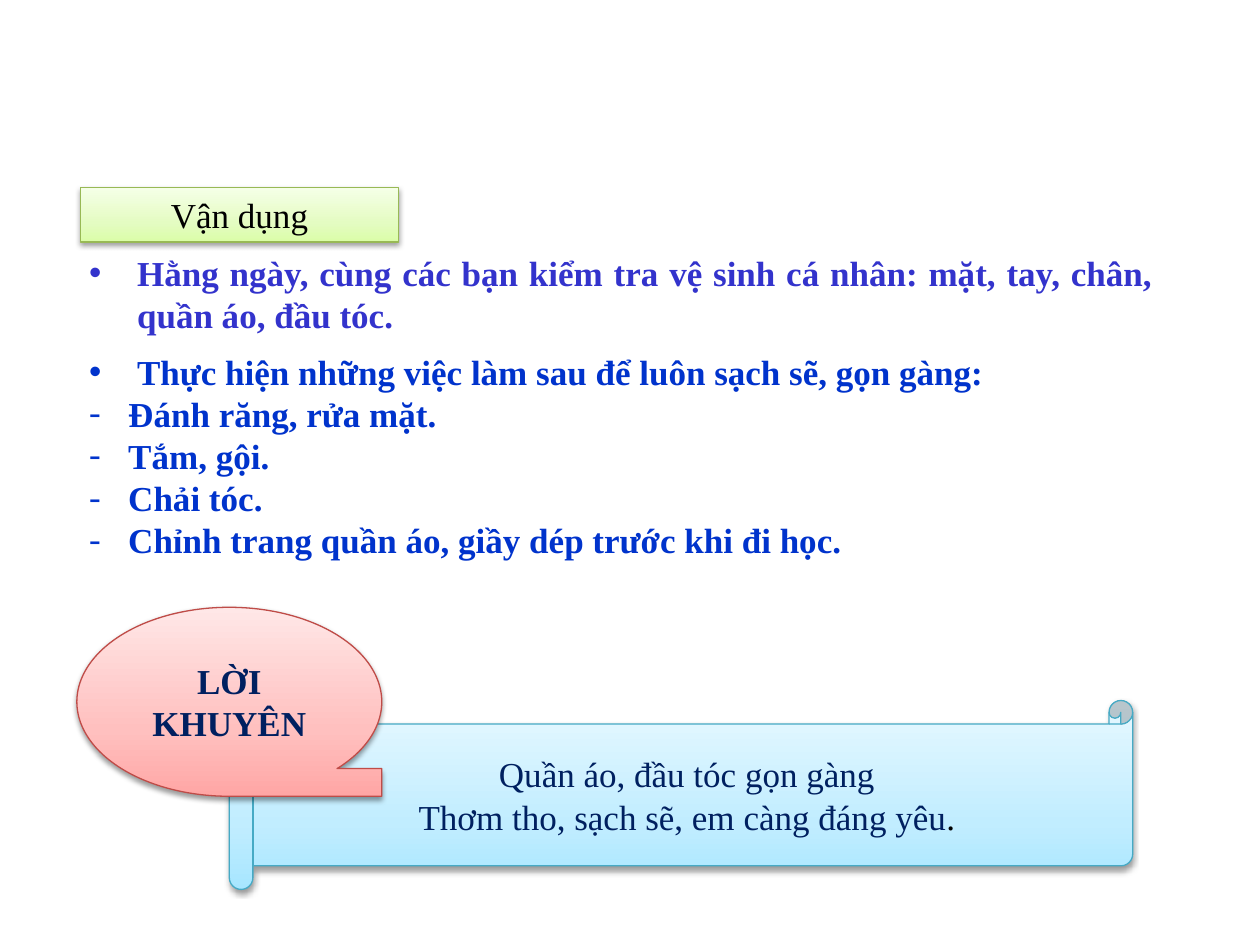
from copy import deepcopy

from lxml import etree
from pptx import Presentation
from pptx.dml.color import RGBColor
from pptx.enum import shapes, text
from pptx.oxml import ns
from pptx.util import Inches, Pt

VIOLET = RGBColor(0x33, 0x33, 0xCC)
BLUE = RGBColor(0x00, 0x33, 0xCC)
NAVY = RGBColor(0x00, 0x20, 0x60)
BLACK = RGBColor(0x00, 0x00, 0x00)
# Gradient stops from bottom to top, then the outline
SKY = [RGBColor.from_string(c) for c in ("A7E6FF", "C1EDFF", "E7F8FF", "46AAC5")]
ROSE = [RGBColor.from_string(c) for c in ("FFA6A5", "FFC0BF", "FFE7E7", "BF4C48")]
LIME = [RGBColor.from_string(c) for c in ("DAFDA7", "E4FCC2", "F5FFE7", "98B955")]

prs = Presentation()
prs.slide_width, prs.slide_height = Inches(10), Inches(7.5)
s = prs.slides.add_slide(prs.slide_layouts[6])


def add_run(p, words, color, bold):
    r = p.add_run()
    r.text = words
    font = {"name": "Times New Roman", "size": Pt(20), "bold": bold}
    for key, value in font.items():
        setattr(r.font, key, value)
    r.font.color.rgb = color


def add_sub(parent, tag, **attrs):
    return etree.SubElement(parent, ns.qn(tag), attrs)


# Bulleted lists: box, colour, (bullet, indent, words)
lists = [
    ((0.61, 1.95, 8.64, 0.77), VIOLET, [
        ("•", 0.38, "Hằng ngày, cùng các bạn kiểm tra vệ sinh cá nhân: mặt, tay, chân, quần áo, đầu tóc."),
    ]),
    ((0.61, 2.73, 8.24, 1.78), BLUE, [
        ("•", 0.38, "Thực hiện những việc làm sau để luôn sạch sẽ, gọn gàng:"),
        ("-", 0.31, "Đánh răng, rửa mặt."),
        ("-", 0.31, "Tắm, gội."),
        ("-", 0.31, "Chải tóc."),
        ("-", 0.31, "Chỉnh trang quần áo, giầy dép trước khi đi học."),
    ]),
]
for box, color, items in lists:
    tf = s.shapes.add_textbox(*map(Inches, box)).text_frame
    tf.word_wrap = True
    for i, (bullet, indent, words) in enumerate(items):
        p = tf.add_paragraph() if i else tf.paragraphs[0]
        p.alignment = text.PP_ALIGN.JUSTIFY
        pPr = p._p.get_or_add_pPr()
        pPr.set("marL", str(Inches(indent)))
        pPr.set("indent", str(-Inches(indent)))
        add_sub(pPr, "a:buFont", typeface="Arial" if bullet == "•" else "Times New Roman")
        add_sub(pPr, "a:buChar", char=bullet)
        add_run(p, words, color, True)

# Scroll, callout and heading: preset, box, colours, bold, lines of (words, colour)
panels = [
    (shapes.MSO_SHAPE.HORIZONTAL_SCROLL, (1.82, 5.56, 7.17, 1.5), SKY, False, [
        [("Quần áo, đầu tóc gọn gàng", NAVY)],
        [("Thơm tho, sạch sẽ, em càng đáng yêu", NAVY), (".", BLACK)],
    ]),
    (shapes.MSO_SHAPE.FLOWCHART_SEQUENTIAL_ACCESS_STORAGE, (0.61, 4.82, 2.42, 1.5), ROSE, True,
     [[("LỜI KHUYÊN", NAVY)]]),
    (shapes.MSO_SHAPE.FLOWCHART_PROCESS, (0.64, 1.49, 2.52, 0.43), LIME, False,
     [[("Vận dụng", BLACK)]]),
]
for preset, box, (*tints, outline), bold, lines in panels:
    sp = s.shapes.add_shape(preset, *map(Inches, box))
    sp.line.color.rgb = outline
    sp.line.width = Pt(0.75)

    # Three-stop upward gradient
    sp.fill.gradient()
    sp.fill.gradient_angle = 90
    gsLst = sp._element.spPr.find(".//" + ns.qn("a:gsLst"))
    gsLst.append(deepcopy(gsLst[0]))
    for stop, position, tint in zip(sp.fill.gradient_stops, (0, 0.35, 1), tints):
        stop.position = position
        stop.color.rgb = tint

    # Soft shadow below
    sp.shadow.inherit = False
    effects = sp._element.spPr.find(ns.qn("a:effectLst"))
    shadow = add_sub(effects, "a:outerShdw", blurRad=str(Pt(3.1)), dist=str(Pt(1.6)),
                     dir="5400000", rotWithShape="0")
    add_sub(add_sub(shadow, "a:srgbClr", val=str(BLACK)), "a:alpha", val="38000")

    # Centred text
    tf = sp.text_frame
    tf.word_wrap = True
    tf.vertical_anchor = text.MSO_ANCHOR.MIDDLE
    for i, runs in enumerate(lines):
        p = tf.add_paragraph() if i else tf.paragraphs[0]
        p.alignment = text.PP_ALIGN.CENTER
        for words, color in runs:
            add_run(p, words, color, bold)

prs.save("out.pptx")
